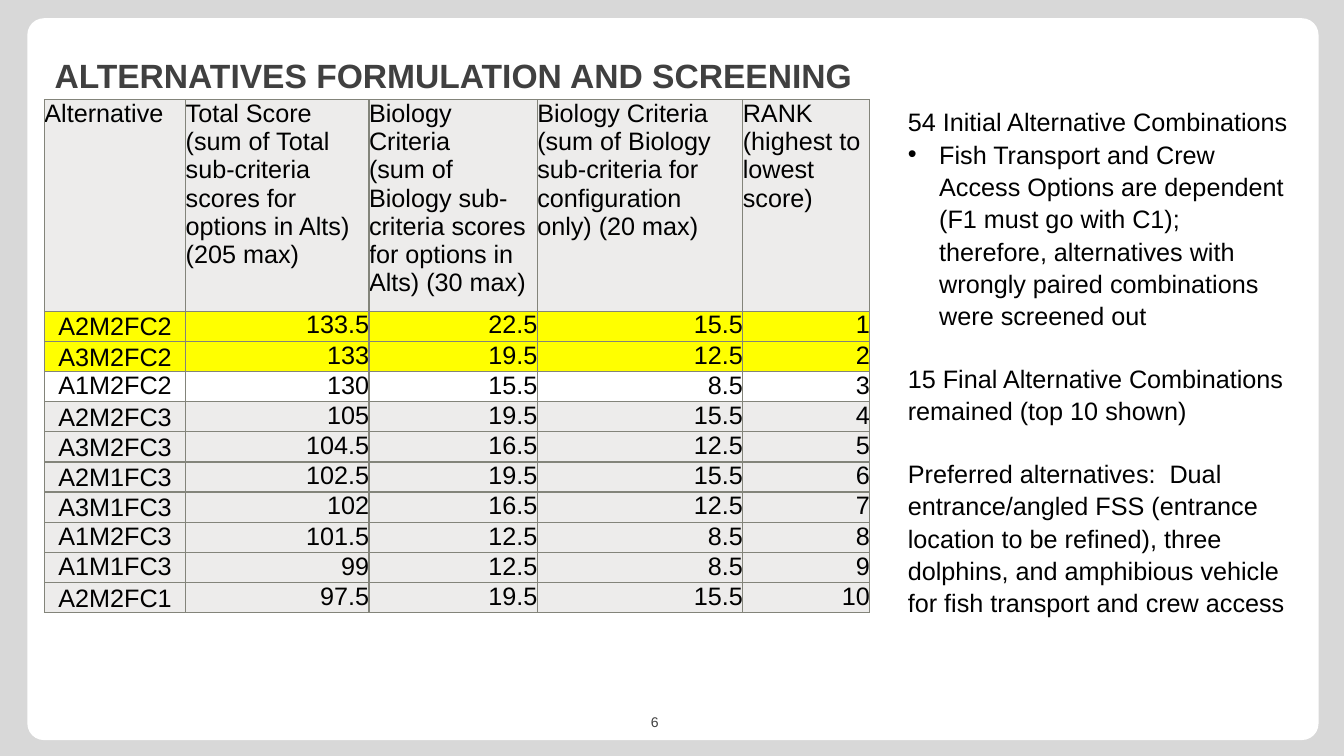
from lxml import etree
from pptx import Presentation
from pptx.dml.color import RGBColor
from pptx.enum.shapes import MSO_SHAPE
from pptx.enum.text import MSO_ANCHOR, PP_ALIGN
from pptx.oxml import parse_xml
from pptx.oxml.ns import nsdecls, qn
from pptx.util import Cm, Pt

ROUNDED = MSO_SHAPE.ROUNDED_RECTANGLE
LEFT, CENTER, RIGHT = PP_ALIGN.LEFT, PP_ALIGN.CENTER, PP_ALIGN.RIGHT
TOP, MIDDLE, BOTTOM = MSO_ANCHOR.TOP, MSO_ANCHOR.MIDDLE, MSO_ANCHOR.BOTTOM

COLORS = {
    "backdrop": "D8D8D8",
    "panel": "FFFFFF",
    "heading": "404040",
    "text": "000000",
    "cell": "EDECEB",
    "preferred": "FFFF00",
    "border": "83847A",
}

CRITERIA = [
    "Alternative",
    "Total Score\v(sum of Total sub-criteria scores for options in Alts) (205 max)",
    "Biology Criteria\n(sum of Biology sub-criteria scores for options in Alts) (30 max)",
    "Biology Criteria\n(sum of Biology sub-criteria for configuration only) (20 max)",
    "RANK\n(highest to lowest score)",
]
SCORES = [
    ("A2M2FC2", "133.5", "22.5", "15.5"),
    ("A3M2FC2", "133", "19.5", "12.5"),
    ("A1M2FC2", "130", "15.5", "8.5"),
    ("A2M2FC3", "105", "19.5", "15.5"),
    ("A3M2FC3", "104.5", "16.5", "12.5"),
    ("A2M1FC3", "102.5", "19.5", "15.5"),
    ("A3M1FC3", "102", "16.5", "12.5"),
    ("A1M2FC3", "101.5", "12.5", "8.5"),
    ("A1M1FC3", "99", "12.5", "8.5"),
    ("A2M2FC1", "97.5", "19.5", "15.5"),
]
RANK_FILLS = {1: "preferred", 2: "preferred", 3: None}
COLUMN_WIDTHS = [3.56, 4.62, 4.24, 5.18, 3.2]
HEADER_HEIGHT, SCORE_HEIGHT = 5.33, 0.76

# Each finding: text, bulleted, space before in points
FINDINGS = [
    ("54 Initial Alternative Combinations", False, 0),
    ("Fish Transport and Crew Access Options are dependent (F1 must go with C1); "
     "therefore, alternatives with wrongly paired combinations were screened out", True, 0),
    ("15 Final Alternative Combinations remained (top 10 shown)", False, 21.6),
    ("Preferred alternatives:  Dual entrance/angled FSS (entrance location to be "
     "refined), three dolphins, and amphibious vehicle for fish transport and crew "
     "access", False, 21.6),
]


def rgb(name):
    return RGBColor.from_string(COLORS[name])


def set_all(target, values):
    for attribute, value in values.items():
        setattr(target, attribute, value)


class ScreeningSlide:
    font_name = "Arial"

    def __init__(self, presentation):
        self.slide = presentation.slides.add_slide(presentation.slide_layouts[5])
        background = self.slide.background.fill
        background.solid()
        background.fore_color.rgb = rgb("backdrop")

    def style(self, paragraph, size=18, color="text", bold=False, **layout):
        set_all(paragraph, layout)
        set_all(paragraph.font, {"name": self.font_name, "size": Pt(size), "bold": bold})
        paragraph.font.color.rgb = rgb(color)

    def panel(self, left, top, width, height):
        panel = self.slide.shapes.add_shape(
            ROUNDED, Cm(left), Cm(top), Cm(width), Cm(height))
        panel.adjustments[0] = 0.023
        panel.shadow.inherit = False
        panel.fill.solid()
        panel.fill.fore_color.rgb = rgb("panel")
        panel.line.fill.background()

    def title(self, text, left, top, width, height):
        title = self.slide.shapes.title
        set_all(title, {"left": Cm(left), "top": Cm(top),
                        "width": Cm(width), "height": Cm(height)})
        title.text_frame.text = text
        title.text_frame.vertical_anchor = MIDDLE
        self.style(title.text_frame.paragraphs[0], 24, "heading", True, alignment=LEFT)

    def text_frame(self, left, top, width, height, anchor=TOP):
        box = self.slide.shapes.add_textbox(Cm(left), Cm(top), Cm(width), Cm(height))
        set_all(box.text_frame, {"word_wrap": True, "vertical_anchor": anchor})
        return box.text_frame

    def page_number(self, text, *place):
        frame = self.text_frame(*place, anchor=MIDDLE)
        frame.text = text
        self.style(frame.paragraphs[0], 10, "heading", alignment=CENTER)

    def findings(self, findings, *place):
        frame = self.text_frame(*place)
        for index, (text, bulleted, gap) in enumerate(findings):
            paragraph = frame.add_paragraph() if index else frame.paragraphs[0]
            paragraph.text = text
            if bulleted:
                properties = paragraph._p.get_or_add_pPr()
                indents = {"marL": Cm(0.79), "indent": -Cm(0.79)}
                for key, value in indents.items():
                    properties.set(key, str(value))
                etree.SubElement(properties, qn("a:buFont"), typeface=self.font_name)
                etree.SubElement(properties, qn("a:buChar"), char="•")
            self.style(paragraph, line_spacing=1.07, space_before=Pt(gap))

    def cell(self, cell, text, fill, alignment=LEFT, anchor=TOP):
        cell.text_frame.text = text
        set_all(cell, {"margin_left": 0, "margin_right": 0, "margin_top": 0,
                       "margin_bottom": 0, "vertical_anchor": anchor})
        for paragraph in cell.text_frame.paragraphs:
            self.style(paragraph, alignment=alignment)
        # Borders come before the fill in the cell properties
        for side in "LRTB":
            cell._tc.get_or_add_tcPr().append(parse_xml(
                f'<a:ln{side} {nsdecls("a")} w="{Pt(1)}"><a:solidFill>'
                f'<a:srgbClr val="{COLORS["border"]}"/></a:solidFill></a:ln{side}>'))
        if fill:
            cell.fill.solid()
            cell.fill.fore_color.rgb = rgb(fill)
        else:
            cell.fill.background()

    def score_table(self, left, top):
        heights = [HEADER_HEIGHT] + [SCORE_HEIGHT] * len(SCORES)
        table = self.slide.shapes.add_table(
            len(heights), len(COLUMN_WIDTHS), Cm(left), Cm(top),
            Cm(sum(COLUMN_WIDTHS)), Cm(sum(heights))).table
        set_all(table, {"first_row": False, "horz_banding": False})
        for column, width in zip(table.columns, COLUMN_WIDTHS):
            column.width = Cm(width)
        for row, height in zip(table.rows, heights):
            row.height = Cm(height)
        # Header row
        for column, criterion in enumerate(CRITERIA):
            self.cell(table.cell(0, column), criterion, "cell")
        # Ranked alternatives; names of the A1 group sit at the top
        for rank, (name, *scores) in enumerate(SCORES, 1):
            fill = RANK_FILLS.get(rank, "cell")
            anchor = TOP if name.startswith("A1") else BOTTOM
            self.cell(table.cell(rank, 0), name, fill, CENTER, anchor)
            for column, score in enumerate([*scores, str(rank)], 1):
                self.cell(table.cell(rank, column), score, fill, RIGHT)


def main():
    presentation = Presentation()
    set_all(presentation, {"slide_width": Cm(33.87), "slide_height": Cm(19.05)})
    screening = ScreeningSlide(presentation)

    # White panel, moved behind the title
    screening.panel(0.69, 0.46, 32.54, 18.19)
    tree = screening.slide.shapes._spTree
    tree.insert(2, tree[-1])

    # Heading, scores, findings and page number
    screening.title("ALTERNATIVES FORMULATION AND SCREENING", 1.12, 0.76, 31.04, 2.24)
    screening.score_table(1.12, 2.51)
    screening.findings(FINDINGS, 22.63, 2.51, 10.16, 13.34)
    screening.page_number("6", 15.14, 17.86, 2.72, 0.66)

    presentation.save("out.pptx")


if __name__ == "__main__":
    main()
